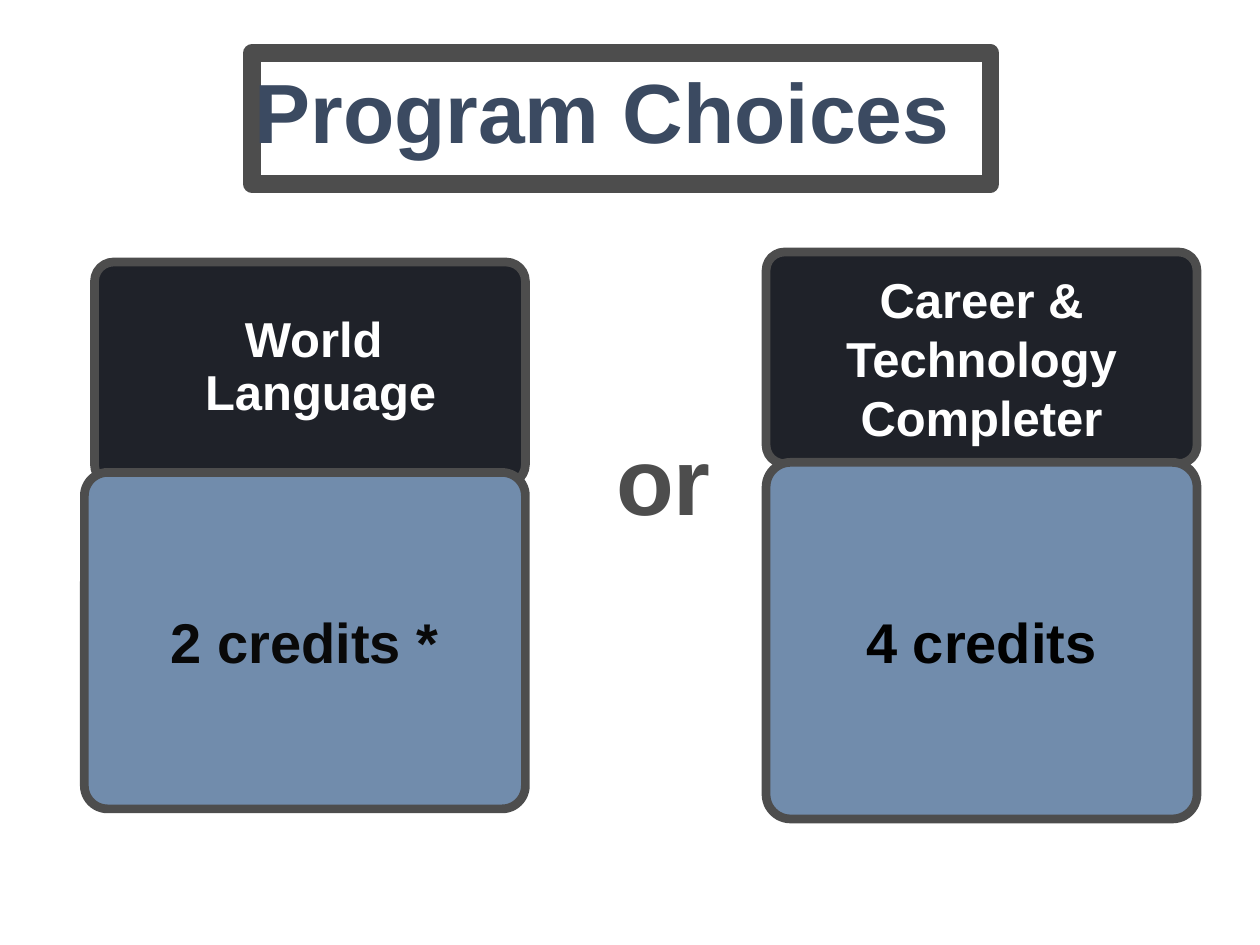
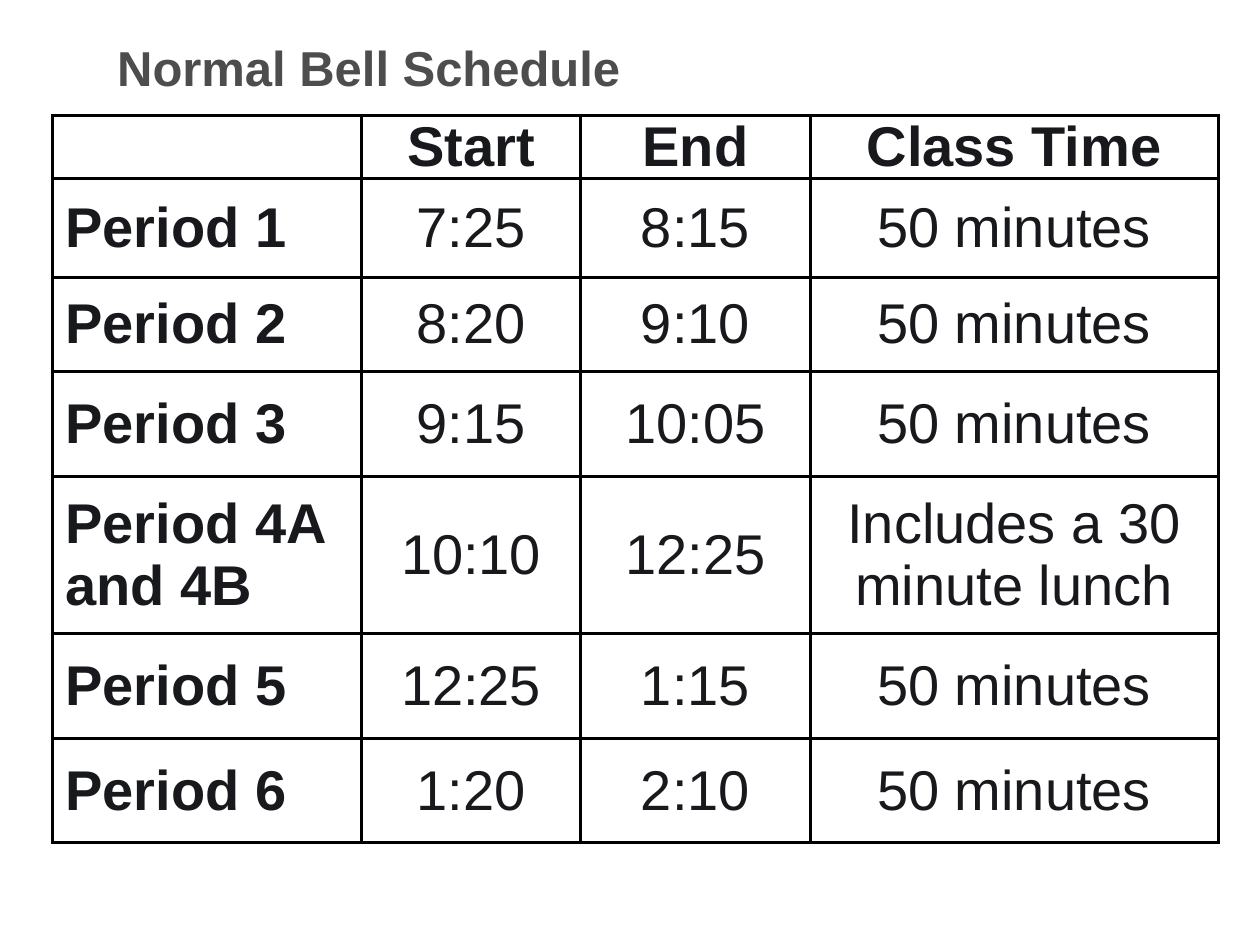
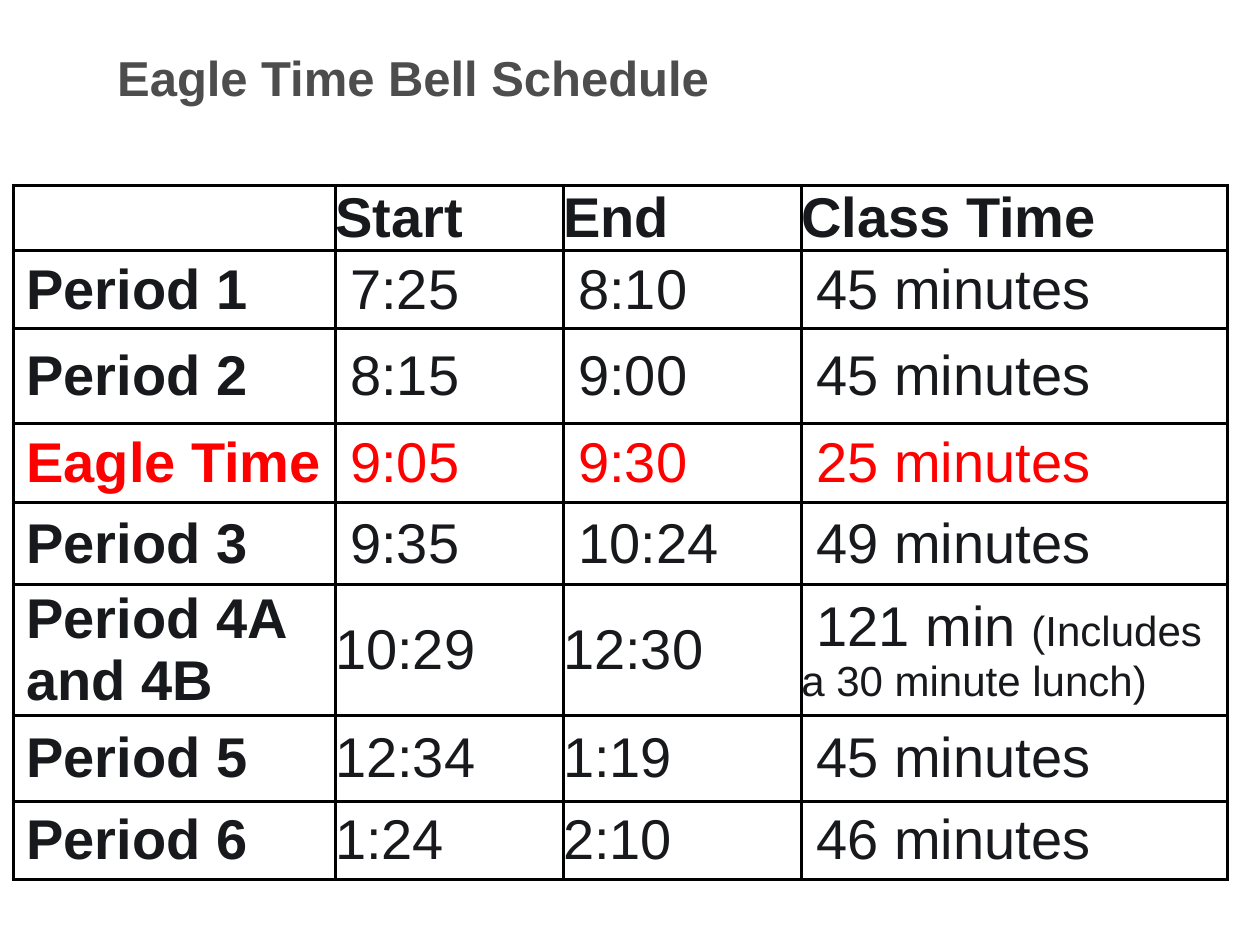
from pptx import Presentation
from pptx.dml.color import RGBColor
from pptx.enum.shapes import MSO_SHAPE
from pptx.enum.text import MSO_ANCHOR, MSO_AUTO_SIZE, PP_ALIGN
from pptx.oxml import parse_xml
from pptx.oxml.ns import nsdecls
from pptx.util import Inches, Pt

RECT = MSO_SHAPE.ROUNDED_RECTANGLE
LEFT, CENTER = PP_ALIGN.LEFT, PP_ALIGN.CENTER
TOP, MIDDLE = MSO_ANCHOR.TOP, MSO_ANCHOR.MIDDLE

GRAY, NAVY, INK, RED = "4D4D4D", "3B4A61", "18191C", "FF0000"
DARK, BLUE, WHITE = "1F2229", "718CAC", "FFFFFF"
NO_MARGINS = dict(margin_left=0, margin_top=0, margin_right=0, margin_bottom=0)


def color(value):
    return RGBColor.from_string(value)


def write(p, text, size, rgb, bold=True, align=LEFT):
    p.alignment = align
    r = p.add_run()
    r.text = text
    for name, value in dict(name="Arial", size=Pt(size), bold=bold).items():
        setattr(r.font, name, value)
    r.font.color.rgb = color(rgb)


prs = Presentation()
prs.slide_width, prs.slide_height = Inches(10), Inches(7.5)

# Slides and their titles: text, position, size, colour
titles = [
    ("Program Choices", (2, 0.42, 5.86, 1.04), 48, NAVY),
    ("Normal Bell Schedule", (0.83, 0.25, 6.58, 0.57), 28, GRAY),
    ("Eagle Time Bell Schedule", (0.83, 0.33, 5.67, 0.57), 28, GRAY),
]
for text, box, size, rgb in titles:
    s = prs.slides.add_slide(prs.slide_layouts[5])
    sp = s.shapes.title
    sp.left, sp.top, sp.width, sp.height = [Inches(v) for v in box]
    tf = sp.text_frame
    tf.auto_size = MSO_AUTO_SIZE.NONE
    tf.vertical_anchor = TOP
    write(tf.paragraphs[0], text, size, rgb)
choices, normal, eagle = prs.slides

# Frame of the first title
sp = choices.shapes.title
sp.line.color.rgb = color(GRAY)
sp.line.width = Pt(10)
sp.text_frame.margin_left = Inches(0.02)

# Program cards: position, corner, fill, text, size, text colour
cards = [
    ((0.75, 2.08, 3.42, 1.76), 0.087, DARK, "", 28, WHITE),
    ((0.67, 3.75, 3.5, 2.67), 0.069, BLUE, "2 credits *", 32, "090909"),
    ((6.08, 2, 3.42, 1.68), 0.087, DARK, "Career & Technology Completer", 28, WHITE),
    ((6.08, 3.67, 3.42, 2.83), 0.069, BLUE, "4 credits", 32, "010101"),
]
for box, corner, fill, text, size, rgb in cards:
    sp = choices.shapes.add_shape(RECT, *[Inches(v) for v in box])
    sp.shadow.inherit = False
    sp.adjustments[0] = corner
    sp.fill.solid()
    sp.fill.fore_color.rgb = color(fill)
    sp.line.color.rgb = color(GRAY)
    sp.line.width = Pt(5)
    tf = sp.text_frame
    for name, value in dict(NO_MARGINS, vertical_anchor=MIDDLE, word_wrap=True).items():
        setattr(tf, name, value)
    if text:
        write(tf.paragraphs[0], text, size, rgb, align=CENTER)

# Free labels: position, lines, size, colour, line spacing, indent
labels = [
    ((1.46, 2.46, 2.17, 0.92), ["World ", "Language"], 28, WHITE, 0.9, 0),
    ((3.5, 3, 3.27, 1.58), ["or"], 54, GRAY, 1.0, 0.26),
]
for box, lines, size, rgb, spacing, indent in labels:
    tf = choices.shapes.add_textbox(*[Inches(v) for v in box]).text_frame
    for name, value in dict(NO_MARGINS, vertical_anchor=MIDDLE, word_wrap=True).items():
        setattr(tf, name, value)
    for i, line in enumerate(lines):
        p = tf.add_paragraph() if i else tf.paragraphs[0]
        write(p, line, size, rgb, align=CENTER)
        p.line_spacing = spacing
        p._p.get_or_add_pPr().set("marL", str(Inches(indent)))

# Bell schedules
header = ["", "Start", "End", "Class Time"]
normal_rows = [
    header,
    ["Period 1", "7:25", "8:15", "50 minutes"],
    ["Period 2", "8:20", "9:10", "50 minutes"],
    ["Period 3", "9:15", "10:05", "50 minutes"],
    ["Period 4A and 4B", "10:10", "12:25", "Includes a 30 minute lunch"],
    ["Period 5", "12:25", "1:15", "50 minutes"],
    ["Period 6", "1:20", "2:10", "50 minutes"],
]
eagle_rows = [
    header,
    ["Period 1", "7:25", "8:10", "45 minutes"],
    ["Period 2", "8:15", "9:00", "45 minutes"],
    ["Eagle Time", "9:05", "9:30", "25 minutes"],
    ["Period 3", "9:35", "10:24", "49 minutes"],
    ["Period 4A and 4B", "10:29", "12:30", "121 min (Includes a 30 minute lunch)"],
    ["Period 5", "12:34", "1:19", "45 minutes"],
    ["Period 6", "1:24", "2:10", "46 minutes"],
]
# Slide, rows, position, column widths, row heights, alignment of the times
schedules = [
    (normal, normal_rows, (0.42, 0.92, 9.25, 5.81), [2.45, 1.74, 1.82, 3.24],
     [0.5, 0.78, 0.75, 0.83, 1.25, 0.83, 0.83], CENTER),
    (eagle, eagle_rows, (0.11, 1.47, 9.64, 5.56), [2.55, 1.81, 1.89, 3.38],
     [0.52, 0.62, 0.75, 0.63, 0.65, 1.04, 0.68, 0.62], LEFT),
]
for s, rows, box, widths, heights, align in schedules:
    frame = s.shapes.add_table(len(rows), len(widths), *[Inches(v) for v in box])
    table = frame.table
    table.first_row = table.horz_banding = False
    for col, width in zip(table.columns, widths):
        col.width = Inches(width)
    for row, height in zip(table.rows, heights):
        row.height = Inches(height)
    for i, row in enumerate(rows):
        rgb = RED if row[0] == "Eagle Time" else INK
        for j, text in enumerate(row):
            cell = table.cell(i, j)
            for name, value in dict(NO_MARGINS, vertical_anchor=MIDDLE).items():
                setattr(cell, name, value)
            if j == 0:
                cell.margin_left = Inches(0.1)
            # Borders come before the fill
            for side in ("lnL", "lnR", "lnT", "lnB"):
                cell._tc.get_or_add_tcPr().append(parse_xml(
                    f'<a:{side} {nsdecls("a")} w="{Pt(2)}"><a:solidFill>'
                    f'<a:srgbClr val="000000"/></a:solidFill></a:{side}>'))
            cell.fill.background()
            if not text:
                continue
            p = cell.text_frame.paragraphs[0]
            main, mark, note = text.partition("(")
            bold = i == 0 or j == 0
            write(p, main, 32, rgb, bold, align if j else LEFT)
            if note:
                write(p, mark + note, 24, rgb, bold, align)
            # Left-aligned times start slightly in, except late start and end times
            if align == LEFT and i and j and (i < 5 or j == 3):
                p._p.get_or_add_pPr().set("indent", str(Inches(0.12)))

prs.save("out.pptx")
